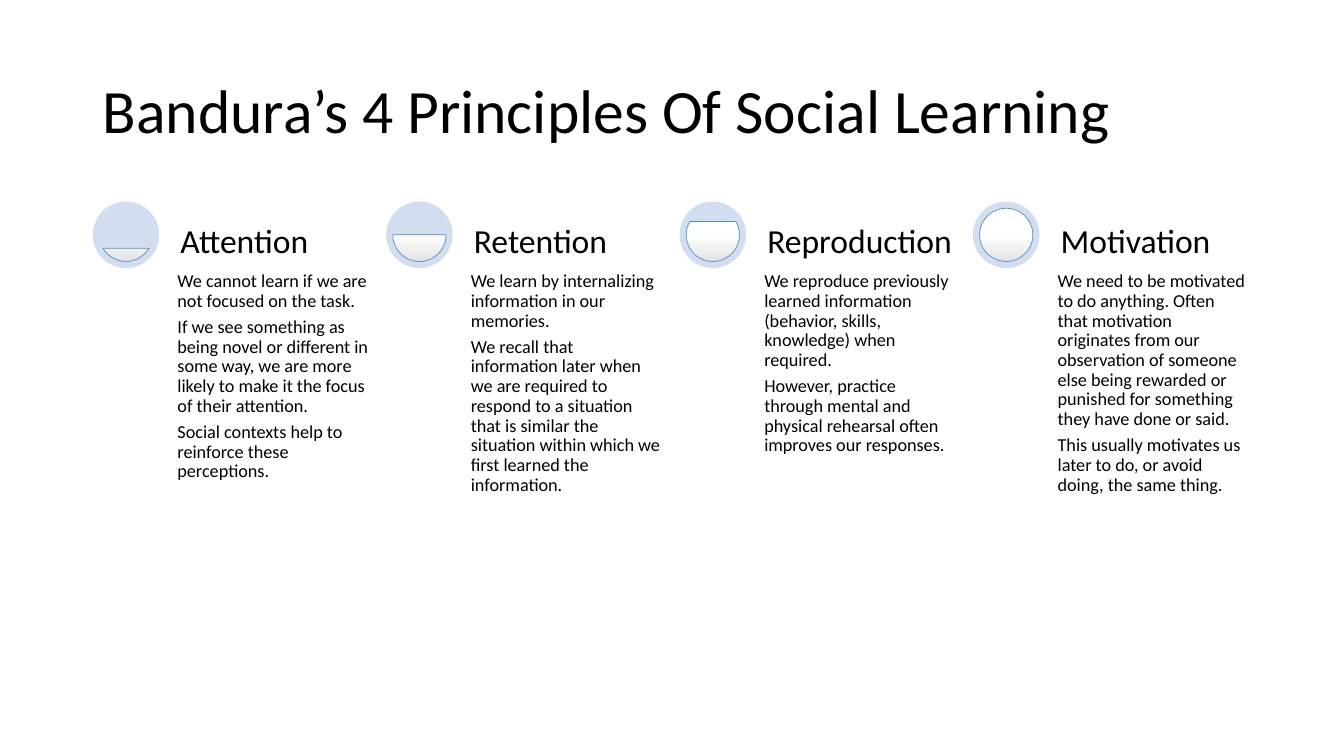
import copy
import math

import pptx
import pptx.dml.color
import pptx.enum.shapes
import pptx.enum.text
import pptx.oxml.ns
import pptx.util

Inches = pptx.util.Inches
Pt = pptx.util.Pt
Shape = pptx.enum.shapes.MSO_SHAPE
Anchor = pptx.enum.text.MSO_ANCHOR

FONT = "Calibri"
COLORS = {
    "text": "000000",
    "disc": "D2DEEF",
    "fill_top": "FFFFFF",
    "fill_bottom": "E3E3E3",
    "outline": "538DC1",
}

TITLE = "Bandura’s 4 Principles Of Social Learning"
PRINCIPLES = [
    ("Attention", [
        "We cannot learn if we are not focused on the task.",
        "If we see something as being novel or different in some way, we are more "
        "likely to make it the focus of their attention.",
        "Social contexts help to reinforce these perceptions.",
    ]),
    ("Retention", [
        "We learn by internalizing information in our memories.",
        "We recall that information later when we are required to respond to a "
        "situation that is similar the situation within which we first learned "
        "the information.",
    ]),
    ("Reproduction", [
        "We reproduce previously learned information (behavior, skills, knowledge) "
        "when required.",
        "However, practice through mental and physical rehearsal often improves "
        "our responses.",
    ]),
    ("Motivation", [
        "We need to be motivated to do anything. Often that motivation originates "
        "from our observation of someone else being rewarded or punished for "
        "something they have done or said.",
        "This usually motivates us later to do, or avoid doing, the same thing.",
    ]),
]


def color(name):
    return pptx.dml.color.RGBColor.from_string(COLORS[name])


def write(frame, lines, size, anchor, inset=None):
    """Fill a text frame with one paragraph per line."""
    frame.word_wrap = True
    frame.auto_size = pptx.enum.text.MSO_AUTO_SIZE.NONE
    frame.vertical_anchor = anchor
    if inset is not None:
        frame.margin_left = frame.margin_right = Inches(inset)
        frame.margin_top = frame.margin_bottom = Inches(inset)
    for index, line in enumerate(lines):
        para = frame.add_paragraph() if index else frame.paragraphs[0]
        para.alignment = pptx.enum.text.PP_ALIGN.LEFT
        para.line_spacing = 0.9
        para.space_before = Pt(0)
        para.space_after = Pt(0.35 * size)
        span = para.add_run()
        span.text = line
        span.font.name = FONT
        span.font.size = Pt(size)
        span.font.color.rgb = color("text")


def add_title(page, left, top, width, height):
    box = page.shapes.title
    box.left, box.top = Inches(left), Inches(top)
    box.width, box.height = Inches(width), Inches(height)
    write(box.text_frame, [TITLE], 44, Anchor.MIDDLE)


def add_gauge(page, left, top, size, level):
    """Draw a disc filled from the bottom up to level (0 to 1)."""
    disc = page.shapes.add_shape(
        Shape.OVAL, Inches(left), Inches(top), Inches(size), Inches(size))
    disc.shadow.inherit = False
    disc.fill.solid()
    disc.fill.fore_color.rgb = color("disc")
    disc.line.fill.background()

    inset = size / 10
    inner = Inches(size - 2 * inset)
    chord = page.shapes.add_shape(
        Shape.CHORD, Inches(left + inset), Inches(top + inset), inner, inner)
    chord.shadow.inherit = False
    start = math.degrees(math.asin(1 - 2 * level))
    for index, angle in enumerate((start, 180 - start)):
        # Angles are stored in 60000ths of a degree, adjustments in 100000ths
        chord.adjustments[index] = round(angle % 360 * 0.6, 2)

    # White upper half, fading to grey at the bottom
    chord.fill.gradient()
    chord.fill.gradient_angle = 270
    first = chord._element.spPr.find(".//" + pptx.oxml.ns.qn("a:gs"))
    first.addnext(copy.deepcopy(first))
    shades = ("fill_top", "fill_top", "fill_bottom")
    for stop, position, shade in zip(chord.fill.gradient_stops, (0, 0.5, 1), shades):
        stop.position = position
        stop.color.rgb = color(shade)
    chord.line.color.rgb = color("outline")
    chord.line.width = Pt(0.5)


def add_principle(page, left, top, level, heading, lines):
    """Place a gauge, with its heading beside it and the details below."""
    gauge, text_left, text_width = 0.66, left + 0.8, 1.97
    add_gauge(page, left, top, gauge, level)
    details = page.shapes.add_textbox(
        Inches(text_left), Inches(top + gauge), Inches(text_width), Inches(2.8))
    write(details.text_frame, lines, 13, Anchor.TOP, 0.04)
    label = page.shapes.add_textbox(
        Inches(text_left), Inches(top), Inches(text_width), Inches(gauge))
    write(label.text_frame, [heading], 24, Anchor.BOTTOM, 0.07)
    # The longest heading needs the full width to stay on one line
    label.text_frame.margin_right = 0


def main():
    deck = pptx.Presentation()
    deck.slide_width, deck.slide_height = Inches(13.33), Inches(7.5)
    page = deck.slides.add_slide(deck.slide_layouts.get_by_name("Title Only"))

    left, pitch = 0.92, 2.91
    add_title(page, left, 0.4, 11.5, 1.45)
    for index, (heading, lines) in enumerate(PRINCIPLES):
        level = (index + 1) / len(PRINCIPLES)
        add_principle(page, left + index * pitch, 2, level, heading, lines)

    deck.save("out.pptx")


if __name__ == "__main__":
    main()
